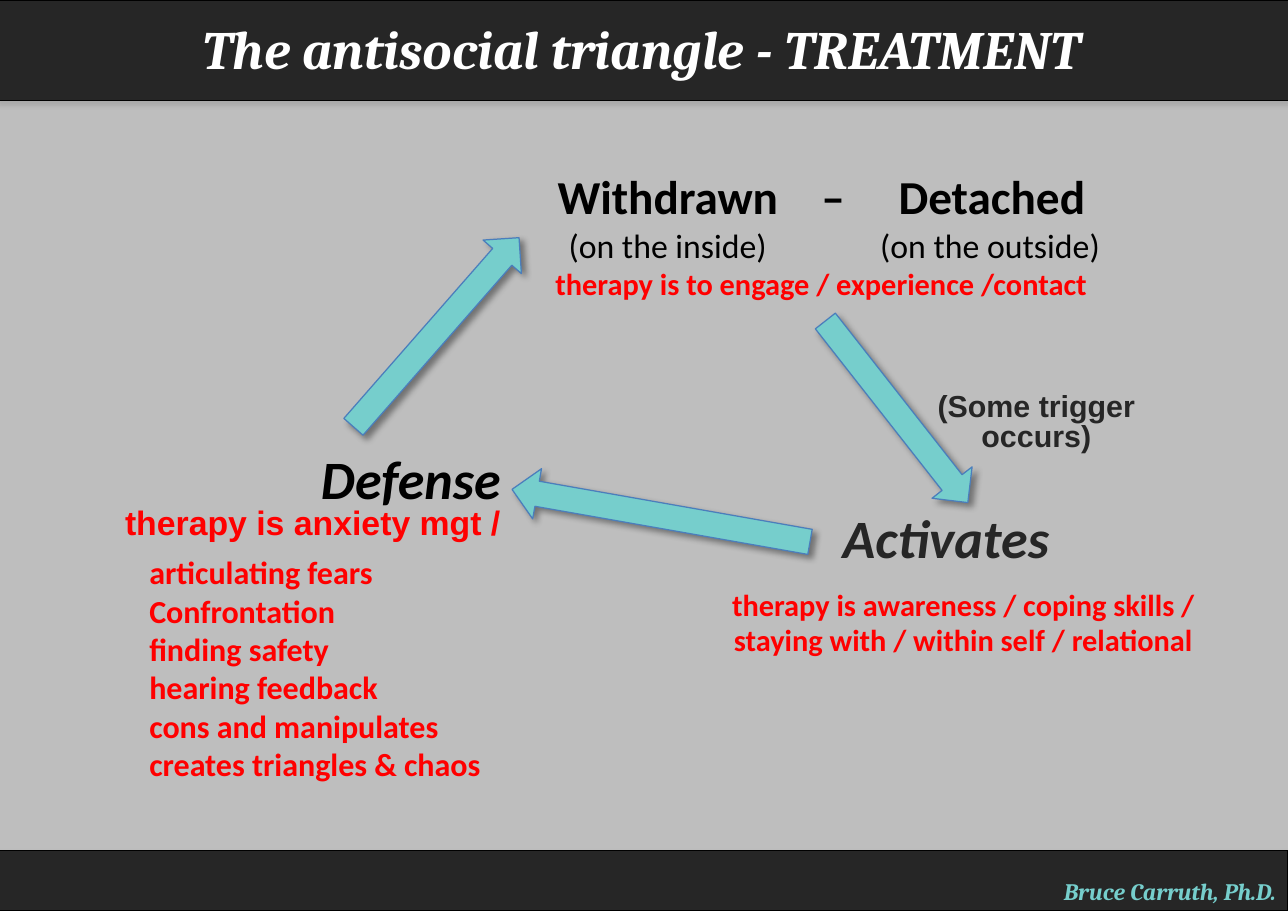
"""Build the antisocial triangle treatment slide."""
from lxml.etree import SubElement
from pptx import Presentation
from pptx.dml.color import RGBColor
from pptx.enum.shapes import MSO_SHAPE as Shape
from pptx.enum.text import MSO_ANCHOR as Anchor, MSO_AUTO_SIZE as Fit, PP_ALIGN as Align
from pptx.oxml.ns import qn
from pptx.util import Pt

GRAY = RGBColor(0xBE, 0xBE, 0xBE)
DARK = RGBColor(0x26, 0x26, 0x26)
BLACK = RGBColor(0, 0, 0)
WHITE = RGBColor(255, 255, 255)
RED = RGBColor(255, 0, 0)
TEAL = RGBColor(0x76, 0xCE, 0xCC)
BLUE = RGBColor(0x4B, 0x7E, 0xBC)

SIZE = (763.2, 540)
TOP = (-1.4, 0, 766.8, 59.8)
FOOT = (-1.4, 504, 764.6, 36)
TITLE = (8.6, 5.8, 743.8, 54)
BAR_SHADE = ("808080", 35, 3.1, 1.8, 90)
ARROW_SHADE = ("000000", 40, 4, 3, 45)

# Font styles: size, face, colour, bold, italic
HEAD = (32, "Cambria", WHITE, True, True)
CREDIT = (14, "Cambria", TEAL, True, True)
STATE = (28, "Calibri", BLACK, True, False)
SIDE = (20, "Calibri", BLACK, False, False)
CARE = (18, "Calibri", RED, True, False)
ITEM = (19, "Calibri", RED, True, False)
STEP = (32, "Calibri", DARK, True, True)
GUARD = (32, "Calibri", BLACK, True, True)
NOTE = (18, "Arial", DARK, True, False)
MGT = (20, "Arial", RED, True, False)

ITEMS = ["articulating fears", "Confrontation", "finding safety",
         "hearing feedback", "cons and manipulates", "creates triangles & chaos"]

# Boxes: place, alignment, line spacing, space before, lines
BOXES = [
    ((291.6, 95.8, 390.2, 108.7), Align.CENTER, 1, 0, [
        ("\tWithdrawn\t–\tDetached", STATE, (97, 195, 289)),
        ("\t(on the inside)\t(on the outside)", SIDE, (97, 288)),
        ("therapy is to engage / experience /contact", CARE)]),
    ((411.8, 347.8, 318.2, 47.5), Align.CENTER, 0.8, 3.6, [
        ("therapy is awareness / coping skills /", CARE),
        ("staying with / within self / relational", CARE)]),
    ((81.4, 324, 249.8, 145.4), Align.LEFT, 1, 0, [(item, ITEM) for item in ITEMS]),
    ((478.1, 303.1, 164.9, 39.6), Align.CENTER, 0.8, 0, [("Activates", STEP)]),
    ((519.8, 230.4, 188.6, 43.2), Align.CENTER, 0.8, 0, [("(Some trigger occurs)", NOTE)]),
    ((64.1, 267.8, 239.8, 57.6), Align.RIGHT, 0.8, 0, [
        ("Defense", GUARD), ("therapy is anxiety mgt /", MGT)]),
]

# Arrows: left, top, length, turn
ARROWS = [(376.6, 216, 179.3, 100), (516.2, 175.7, 136.8, 321.9), (243.4, 122.4, 149, 221.2)]
WIDTH = 30.2


def points(place):
    return [Pt(n) for n in place]


def set_tabs(para, stops):
    tabs = SubElement(para._p.get_or_add_pPr(), qn("a:tabLst"))
    for stop in stops:
        SubElement(tabs, qn("a:tab"), pos=str(Pt(stop)), algn="ctr")


def write(frame, lines, align, gap=1, before=0):
    frame.word_wrap = True
    for i, (text, style, *stops) in enumerate(lines):
        para = frame.add_paragraph() if i else frame.paragraphs[0]
        para.text = text
        para.alignment = Align.LEFT if stops else align
        para.line_spacing = gap
        para.space_before = Pt(before)
        if stops:
            set_tabs(para, stops[0])
        font = para.font
        size, font.name, font.color.rgb, font.bold, font.italic = style
        font.size = Pt(size)


def draw(shapes, kind, place, fill, line, shade):
    shape = shapes.add_shape(kind, *points(place))
    shape.fill.solid()
    shape.fill.fore_color.rgb = fill
    shape.line.color.rgb = line
    shape.line.width = Pt(0.75)
    shape.shadow.inherit = False
    color, alpha, blur, dist, angle = shade
    glow = SubElement(shape.element.spPr.find(qn("a:effectLst")), qn("a:outerShdw"),
                      blurRad=str(Pt(blur)), dist=str(Pt(dist)),
                      dir=str(angle * 60000), rotWithShape="0")
    tint = SubElement(glow, qn("a:srgbClr"), val=color)
    SubElement(tint, qn("a:alpha"), val=str(alpha * 1000))
    return shape


def main():
    deck = Presentation()
    deck.slide_width, deck.slide_height = points(SIZE)
    slide = deck.slides.add_slide(deck.slide_layouts[5])
    slide.background.fill.solid()
    slide.background.fill.fore_color.rgb = GRAY
    shapes = slide.shapes

    foot = draw(shapes, Shape.RECTANGLE, FOOT, DARK, BLACK, BAR_SHADE)
    foot.text_frame.vertical_anchor = Anchor.BOTTOM
    write(foot.text_frame, [("Bruce Carruth, Ph.D.", CREDIT)], Align.RIGHT)

    bar = draw(shapes, Shape.RECTANGLE, TOP, DARK, BLACK, BAR_SHADE)
    title = shapes.title
    bar.element.addnext(title.element)
    title.left, title.top, title.width, title.height = points(TITLE)
    title.text_frame.auto_size = Fit.NONE
    title.text_frame.vertical_anchor = Anchor.TOP
    write(title.text_frame, [("The antisocial triangle - TREATMENT", HEAD)], Align.CENTER)

    for place, align, gap, before, lines in BOXES:
        box = shapes.add_textbox(*points(place))
        write(box.text_frame, lines, align, gap, before)

    for left, top, length, turn in ARROWS:
        arrow = draw(shapes, Shape.DOWN_ARROW, (left, top, WIDTH, length),
                     TEAL, BLUE, ARROW_SHADE)
        arrow.rotation = turn

    deck.save("out.pptx")


if __name__ == "__main__":
    main()
